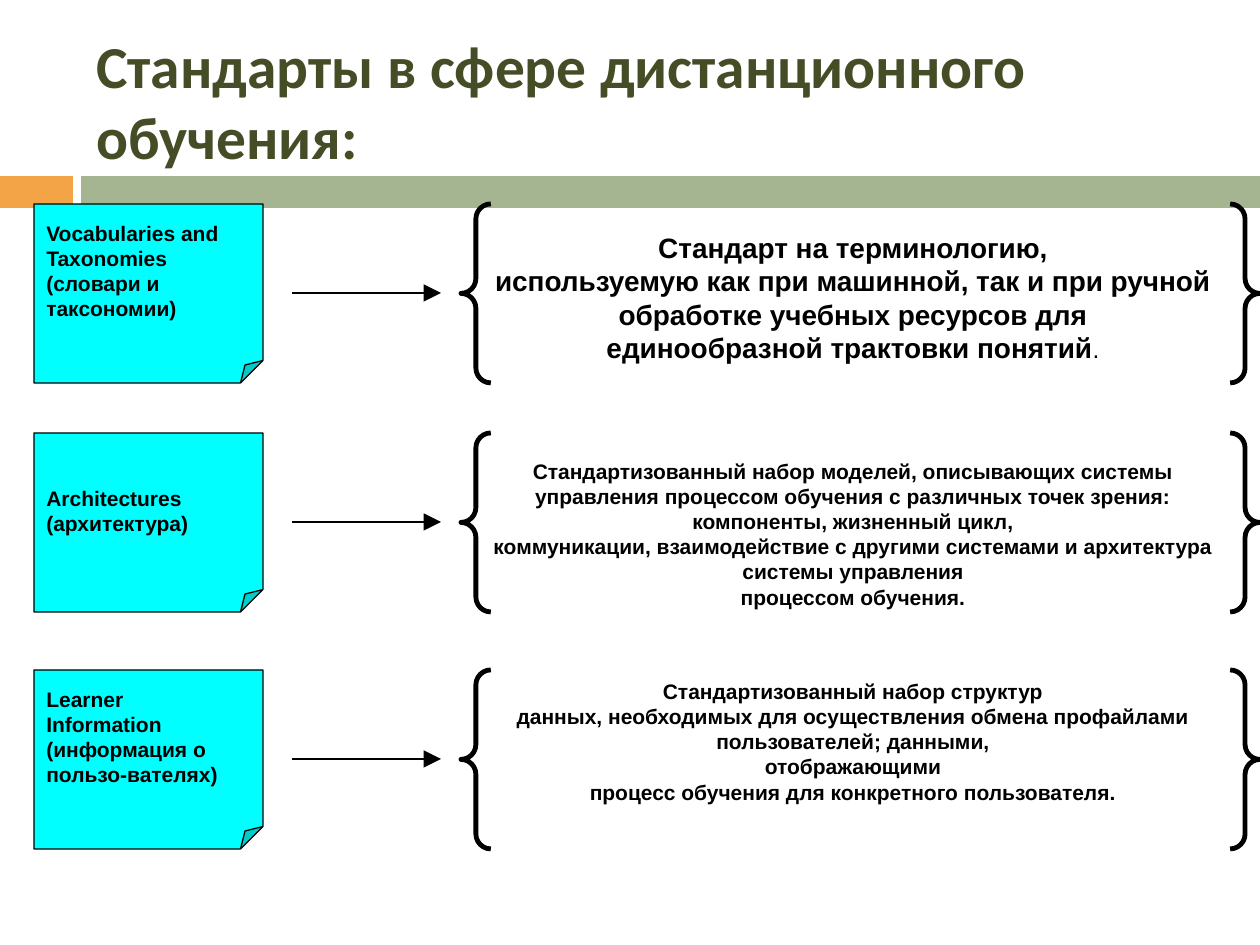
from dataclasses import dataclass

from lxml import etree
from pptx import Presentation
from pptx.dml.color import RGBColor
from pptx.enum.shapes import MSO_CONNECTOR, MSO_SHAPE
from pptx.enum.text import MSO_ANCHOR, PP_ALIGN
from pptx.oxml.ns import qn
from pptx.util import Emu, Pt

RECTANGLE = MSO_SHAPE.RECTANGLE
FOLDED_NOTE = MSO_SHAPE.FOLDED_CORNER
BRACES = MSO_SHAPE.DOUBLE_BRACE
STRAIGHT = MSO_CONNECTOR.STRAIGHT
TOP, MIDDLE = MSO_ANCHOR.TOP, MSO_ANCHOR.MIDDLE
LEFT, CENTER = PP_ALIGN.LEFT, PP_ALIGN.CENTER


@dataclass(frozen=True)
class Theme:
    title_color: RGBColor = RGBColor(0x44, 0x4D, 0x26)
    accent: RGBColor = RGBColor(0xF3, 0xA4, 0x47)
    band: RGBColor = RGBColor(0xA5, 0xB5, 0x92)
    note: RGBColor = RGBColor(0x00, 0xFF, 0xFF)
    ink: RGBColor = RGBColor(0x00, 0x00, 0x00)
    title_font: str = "Calibri"
    body_font: str = "Arial"
    title_size: int = 34
    large_size: int = 16
    stop_size: int = 14
    body_size: int = 12
    thin_line: float = 0.75
    brace_line: float = 2.75


THEME = Theme()

ROW_LEFT, ROW_WIDTH, ROW_HEIGHT = 34, 1226, 179
ROWS = [
    {
        "top": 204,
        "label": "Vocabularies and Taxonomies (словари и таксономии)",
        "label_offset": 10,
        "description": [
            "Стандарт на терминологию,",
            "используемую как при машинной, так и при ручной обработке учебных ресурсов для",
            "единообразной трактовки понятий",
        ],
        "description_offset": 20,
        "size": THEME.large_size,
        "light_ending": ".",
    },
    {
        "top": 433,
        "label": "Architectures (архитектура)",
        "label_offset": 46,
        "description": [
            "Стандартизованный набор моделей, описывающих системы",
            "управления процессом обучения с различных точек зрения: компоненты, жизненный цикл,",
            "коммуникации, взаимодействие с другими системами и архитектура системы управления",
            "процессом обучения.",
        ],
        "description_offset": 19,
        "size": THEME.body_size,
        "light_ending": "",
    },
    {
        "top": 670,
        "label": "Learner Information (информация о пользо-вателях)",
        "label_offset": 10,
        "description": [
            "Стандартизованный набор структур",
            "данных, необходимых для осуществления обмена профайлами пользователей; данными,",
            "отображающими",
            "процесс обучения для конкретного пользователя.",
        ],
        "description_offset": 2,
        "size": THEME.body_size,
        "light_ending": "",
    },
]


def px(length):
    return Emu(round(length * 914400 / 126))


def add_shape(slide, kind, box, fill=None, line_width=None):
    shape = slide.shapes.add_shape(kind, *map(px, box))
    shape.shadow.inherit = False
    if fill is None:
        shape.fill.background()
    else:
        shape.fill.solid()
        shape.fill.fore_color.rgb = fill
    if line_width is None:
        shape.line.fill.background()
    else:
        shape.line.color.rgb = THEME.ink
        shape.line.width = Pt(line_width)
    return shape


def add_note(slide, box):
    note = add_shape(slide, FOLDED_NOTE, box, THEME.note, THEME.thin_line)
    geometry = note._element.spPr.find(qn("a:prstGeom"))
    for guides in geometry.findall(qn("a:avLst")):
        geometry.remove(guides)
    guides = etree.SubElement(geometry, qn("a:avLst"))
    etree.SubElement(guides, qn("a:gd"), name="adj", fmla="val 12500")


def add_text(slide, box, lines, size, font=THEME.body_font, color=THEME.ink,
             align=LEFT, anchor=TOP):
    frame = slide.shapes.add_textbox(*map(px, box)).text_frame
    frame.word_wrap = True
    frame.vertical_anchor = anchor
    for index, line in enumerate(lines):
        paragraph = frame.add_paragraph() if index else frame.paragraphs[0]
        paragraph.text = line
        paragraph.alignment = align
        paragraph.font.name = font
        paragraph.font.size = Pt(size)
        paragraph.font.bold = True
        paragraph.font.color.rgb = color
    return frame


def add_arrow(slide, left, right, y):
    arrow = slide.shapes.add_connector(STRAIGHT, px(left), px(y), px(right), px(y))
    arrow.line.color.rgb = THEME.ink
    arrow.line.width = Pt(THEME.thin_line)
    line = arrow._element.spPr.find(qn("a:ln"))
    etree.SubElement(line, qn("a:tailEnd"), type="triangle", w="lg", len="lg")
    etree.SubElement(arrow._element.spPr, qn("a:effectLst"))


def add_header(slide, left, top, width):
    add_shape(slide, RECTANGLE, (left, top + 176, 73, 32), THEME.accent)
    add_shape(slide, RECTANGLE, (left + 81, top + 176, width - 81, 32), THEME.band)
    add_text(slide, (left + 84, top + 32, 1124, 136),
             ["Стандарты в сфере дистанционного обучения:"],
             THEME.title_size, THEME.title_font, THEME.title_color, anchor=MIDDLE)


def add_standard_row(slide, left, top, width, height, row):
    add_note(slide, (left, top, 229, height))
    add_text(slide, (left, top + row["label_offset"], 199, 120),
             [row["label"]], THEME.body_size)
    add_arrow(slide, left + 258, left + 407, top + height // 2)
    add_shape(slide, BRACES, (left + 427, top, width - 427, height),
              line_width=THEME.brace_line)
    frame = add_text(slide, (left + 437, top + row["description_offset"], 764, 147),
                     row["description"], row["size"], align=CENTER)
    if row["light_ending"]:
        ending = frame.paragraphs[-1].add_run()
        ending.text = row["light_ending"]
        ending.font.size = Pt(THEME.stop_size)
        ending.font.bold = False


def main():
    presentation = Presentation()
    presentation.slide_width = px(1260)
    presentation.slide_height = px(945)
    slide = presentation.slides.add_slide(presentation.slide_layouts[6])
    add_header(slide, 0, 0, 1260)
    for row in ROWS:
        add_standard_row(slide, ROW_LEFT, row["top"], ROW_WIDTH, ROW_HEIGHT, row)
    presentation.save("out.pptx")


if __name__ == "__main__":
    main()
